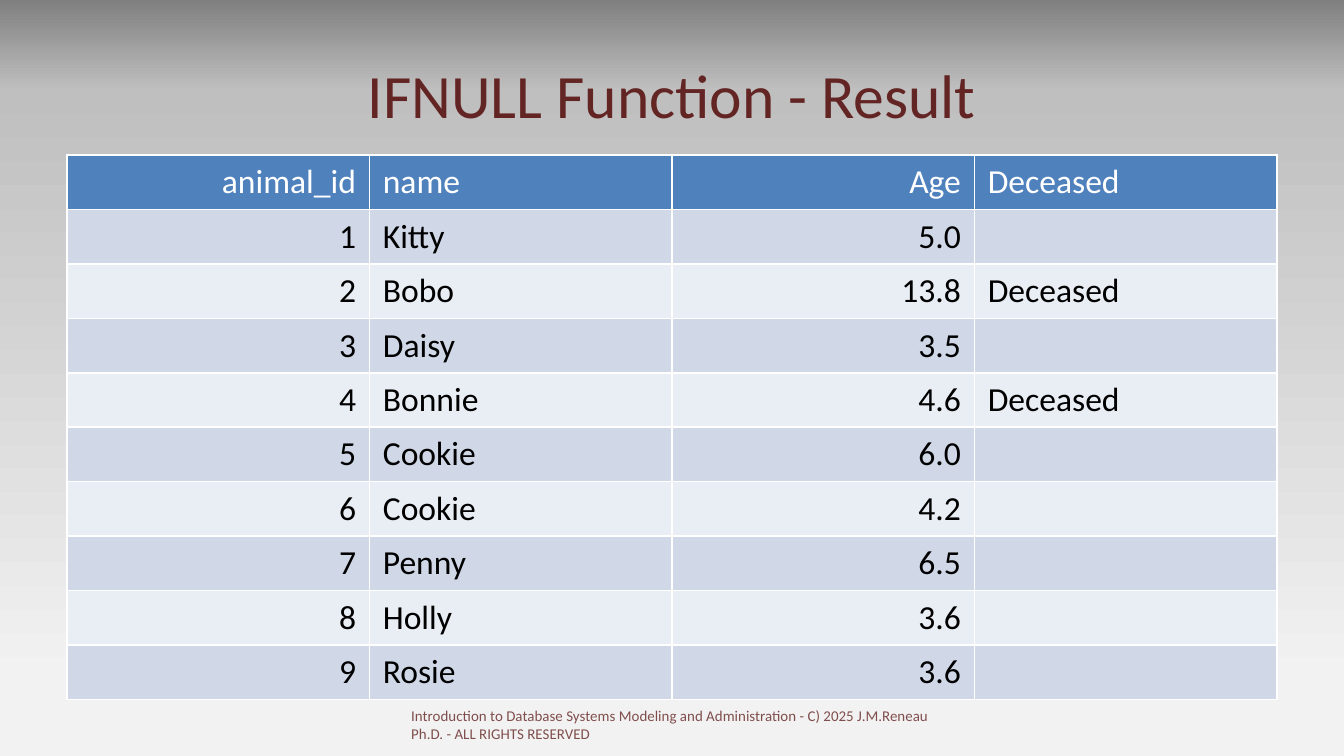
from copy import deepcopy

from lxml import etree
from pptx import Presentation
from pptx import util as u
from pptx.dml.color import RGBColor
from pptx.enum import text
from pptx.oxml import ns

TITLE = "IFNULL Function - Result"
FOOTER = ("Introduction to Database Systems Modeling and Administration"
          " - C) 2025 J.M.Reneau Ph.D. - ALL RIGHTS RESERVED")
HEADER = ("animal_id", "name", "Age", "Deceased")
ANIMALS = [
    ("1", "Kitty", "5.0", ""),
    ("2", "Bobo", "13.8", "Deceased"),
    ("3", "Daisy", "3.5", ""),
    ("4", "Bonnie", "4.6", "Deceased"),
    ("5", "Cookie", "6.0", ""),
    ("6", "Cookie", "4.2", ""),
    ("7", "Penny", "6.5", ""),
    ("8", "Holly", "3.6", ""),
    ("9", "Rosie", "3.6", ""),
]
NUMBER_COLUMNS = (0, 2)

FONT = "Calibri"
MAROON = RGBColor(0x63, 0x25, 0x23)
WHITE = RGBColor(0xFF, 0xFF, 0xFF)
BLACK = RGBColor(0x00, 0x00, 0x00)
HEADER_BLUE = RGBColor(0x4F, 0x81, 0xBD)
BANDS = (RGBColor(0xD0, 0xD8, 0xE8), RGBColor(0xE9, 0xED, 0xF4))
BACKGROUND_STOPS = [
    (0, RGBColor(0x80, 0x80, 0x80)),
    (0.12, RGBColor(0xBF, 0xBF, 0xBF)),
    (0.9, RGBColor(0xF2, 0xF2, 0xF2)),
]

# Left, top, width, height in px
SLIDE_SIZE = (1344, 756)
TITLE_BOX = (67, 31, 1210, 126)
TABLE_BOX = (67, 155, 1210, 545)
FOOTER_BOX = (398, 700, 546, 40)
PX = u.Inches(10) / SLIDE_SIZE[0]


def emu(lengths):
    return [u.Emu(round(length * PX)) for length in lengths]


def style(paragraph, size, color, alignment):
    paragraph.alignment = alignment
    paragraph.font.name = FONT
    paragraph.font.size = u.Pt(size)
    paragraph.font.bold = False
    paragraph.font.color.rgb = color


def add_background(slide):
    fill = slide.background.fill
    fill.gradient()
    fill.gradient_angle = 270
    stop_list = next(slide.element.iter(ns.qn("a:gsLst")))
    stop_list.append(deepcopy(stop_list[-1]))
    for stop, (position, color) in zip(fill.gradient_stops, BACKGROUND_STOPS):
        stop.position = position
        stop.color.rgb = color


def add_text(slide, box, content, size, alignment, anchor):
    frame = slide.shapes.add_textbox(*emu(box)).text_frame
    frame.word_wrap = True
    frame.vertical_anchor = anchor
    paragraph = frame.paragraphs[0]
    paragraph.text = content
    style(paragraph, size, MAROON, alignment)
    return paragraph


def set_opacity(paragraph, percent):
    color = next(paragraph.font.fill._xPr.iter(ns.qn("a:srgbClr")))
    etree.SubElement(color, ns.qn("a:alpha"), val=str(percent * 1000))


def add_borders(cell, color, width):
    properties = cell._tc.get_or_add_tcPr()
    for side in ("lnL", "lnR", "lnT", "lnB"):
        line = etree.SubElement(properties, ns.qn(f"a:{side}"), w=str(u.Pt(width)))
        fill = etree.SubElement(line, ns.qn("a:solidFill"))
        etree.SubElement(fill, ns.qn("a:srgbClr"), val=str(color))


def add_animal_table(slide):
    rows = [HEADER, *ANIMALS]
    left, top, width, height = emu(TABLE_BOX)
    table = slide.shapes.add_table(
        len(rows), len(HEADER), left, top, width, height).table
    table.first_row = False
    table.horz_banding = False
    for row_index, row in enumerate(rows):
        is_header = row_index == 0
        for column_index, value in enumerate(row):
            cell = table.cell(row_index, column_index)
            add_borders(cell, WHITE, 1)
            cell.fill.solid()
            cell.fill.fore_color.rgb = (
                HEADER_BLUE if is_header else BANDS[(row_index - 1) % 2])
            cell.text = value
            style(cell.text_frame.paragraphs[0], 18,
                  WHITE if is_header else BLACK,
                  text.PP_ALIGN.RIGHT if column_index in NUMBER_COLUMNS
                  else text.PP_ALIGN.LEFT)


def main():
    presentation = Presentation()
    presentation.slide_width, presentation.slide_height = emu(SLIDE_SIZE)
    slide = presentation.slides.add_slide(presentation.slide_layouts[6])
    add_background(slide)
    add_text(slide, TITLE_BOX, TITLE, 33,
             text.PP_ALIGN.CENTER, text.MSO_ANCHOR.MIDDLE)
    add_animal_table(slide)
    footer = add_text(slide, FOOTER_BOX, FOOTER, 8,
                      text.PP_ALIGN.LEFT, text.MSO_ANCHOR.TOP)
    set_opacity(footer, 80)
    presentation.save("out.pptx")


if __name__ == "__main__":
    main()
